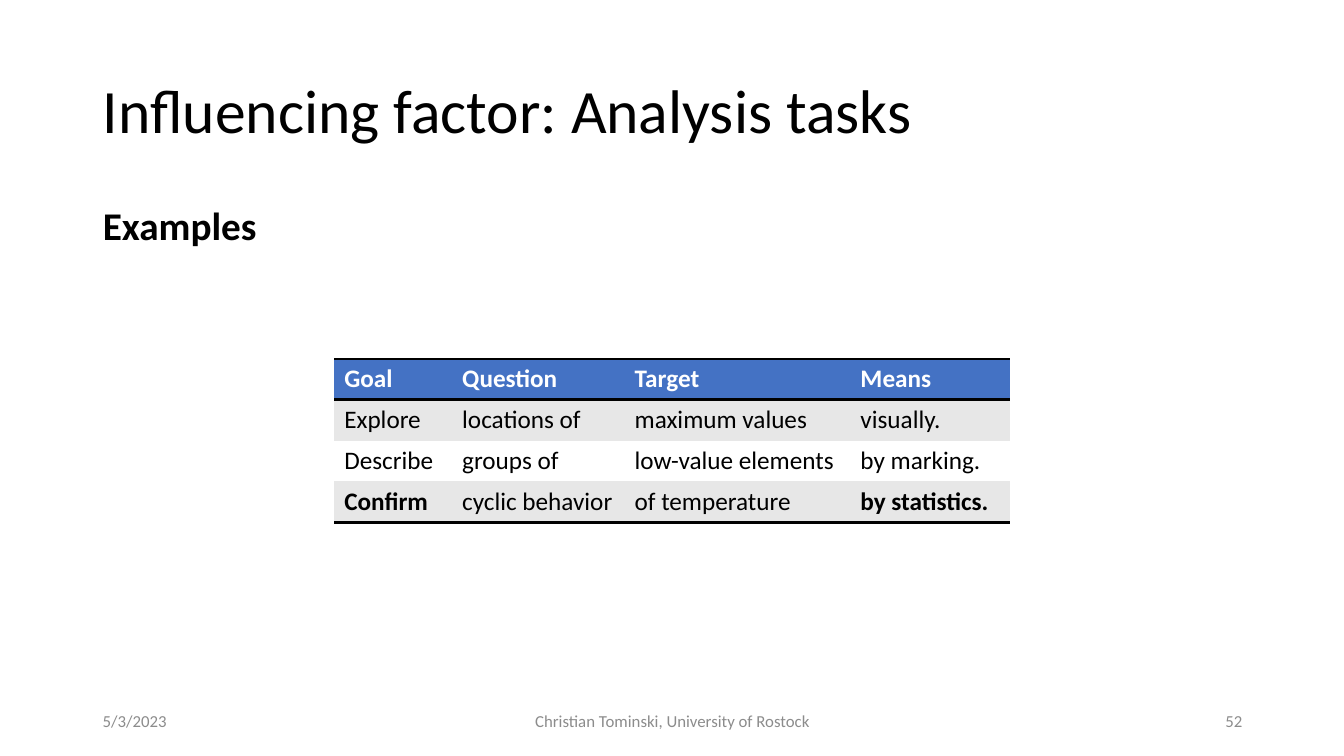
import pptx
import pptx.dml.color
import pptx.enum.text
import pptx.oxml
import pptx.oxml.ns
import pptx.util

# Content
TITLE = "Influencing factor: Analysis tasks"
SUBTITLE = "Examples"
HEADER = ("Goal", "Question", "Target", "Means")
TASKS = [
    ("Explore", "locations of", "maximum values", "visually."),
    ("Describe", "groups of", "low-value elements", "by marking."),
    ("Confirm", "cyclic behavior", "of temperature", "by statistics."),
]
BOLD_WORDS = ("Confirm", "by statistics.")

ALIGN = pptx.enum.text.PP_ALIGN
ANCHOR = pptx.enum.text.MSO_ANCHOR
FOOTER = [  # text, width, share of the free width to its left, alignment
    ("5/3/2023", 3, 0, ALIGN.LEFT),
    ("Christian Tominski, University of Rostock", 4.5, 0.5, ALIGN.CENTER),
    ("52", 3, 1, ALIGN.RIGHT),
]

# Layout in inches
SLIDE_WIDTH, SLIDE_HEIGHT = 13.33, 7.5
MARGIN = 0.92
CONTENT_WIDTH = 11.5
COLUMN_WIDTHS = (1.17, 1.71, 2.24, 1.58)
ROW_HEIGHT = 1.62 / 4
TABLE_TOP = 3.56
NO_STYLE = "{2D5ABB26-0587-4C30-8999-92F81FD0307C}"
BLACK, WHITE, BLUE, BAND, GREY = "000000", "FFFFFF", "4472C4", "E7E7E7", "8C8C8C"


def rgb(value):
    return pptx.dml.color.RGBColor.from_string(value)


def inches(*values):
    return [pptx.util.Inches(value) for value in values]


def format_paragraph(paragraph, size, color, bold=False, alignment=ALIGN.LEFT):
    paragraph.alignment = alignment
    font = paragraph.font
    font.name = "Calibri"
    font.size = pptx.util.Pt(size)
    font.bold = bold
    font.color.rgb = rgb(color)


def place(shape, left, top, width, height, anchor):
    shape.left, shape.top, shape.width, shape.height = inches(left, top, width, height)
    frame = shape.text_frame
    frame.word_wrap = True
    frame.auto_size = pptx.enum.text.MSO_AUTO_SIZE.NONE
    frame.vertical_anchor = anchor
    return frame.paragraphs[0]


def add_border(cell, tag):
    cell._tc.get_or_add_tcPr().append(pptx.oxml.parse_xml(
        f'<a:{tag} {pptx.oxml.ns.nsdecls("a")} w="{pptx.util.Pt(2)}">'
        f'<a:solidFill><a:srgbClr val="{BLACK}"/></a:solidFill></a:{tag}>'))


presentation = pptx.Presentation()
presentation.slide_width, presentation.slide_height = inches(SLIDE_WIDTH, SLIDE_HEIGHT)
slide = presentation.slides.add_slide(presentation.slide_layouts[1])

# Title and body
title, body = slide.placeholders
title.text_frame.text = TITLE
paragraph = place(title, MARGIN, 0.4, CONTENT_WIDTH, 1.45, ANCHOR.MIDDLE)
paragraph.line_spacing = 0.9
format_paragraph(paragraph, 44, BLACK)

body.text_frame.text = SUBTITLE
paragraph = place(body, MARGIN, 2, CONTENT_WIDTH, 4.76, ANCHOR.TOP)
properties = paragraph._p.get_or_add_pPr()
properties.set("marL", "0")
properties.set("indent", "0")
properties.append(pptx.oxml.parse_xml(f'<a:buNone {pptx.oxml.ns.nsdecls("a")}/>'))
paragraph.line_spacing = 0.9
paragraph.space_before = pptx.util.Pt(0)
format_paragraph(paragraph, 28, BLACK, bold=True)

# Footer
for text, width, share, alignment in FOOTER:
    left = MARGIN + share * (CONTENT_WIDTH - width)
    box = slide.shapes.add_textbox(0, 0, 0, 0)
    box.text_frame.text = text
    paragraph = place(box, left, 6.95, width, 0.4, ANCHOR.MIDDLE)
    format_paragraph(paragraph, 12, GREY, alignment=alignment)

# Table of tasks, centred on the slide
rows = [HEADER] + TASKS
table_width = sum(COLUMN_WIDTHS)
table = slide.shapes.add_table(
    len(rows), len(HEADER),
    *inches((SLIDE_WIDTH - table_width) / 2, TABLE_TOP, table_width, ROW_HEIGHT * len(rows)),
).table
table.horz_banding = False
table._tbl.tblPr.find(pptx.oxml.ns.qn("a:tableStyleId")).text = NO_STYLE
for column, width in zip(table.columns, COLUMN_WIDTHS):
    column.width = pptx.util.Inches(width)

for row_index, row in enumerate(rows):
    is_header = row_index == 0
    fill = BLUE if is_header else (BAND if row_index % 2 else WHITE)
    for column_index, text in enumerate(row):
        cell = table.cell(row_index, column_index)
        cell.text = text
        format_paragraph(cell.text_frame.paragraphs[0], 18,
                         WHITE if is_header else BLACK, is_header or text in BOLD_WORDS)
        if is_header:
            add_border(cell, "lnT")
        if is_header or row_index == len(rows) - 1:
            add_border(cell, "lnB")
        cell.fill.solid()
        cell.fill.fore_color.rgb = rgb(fill)

presentation.save("out.pptx")
